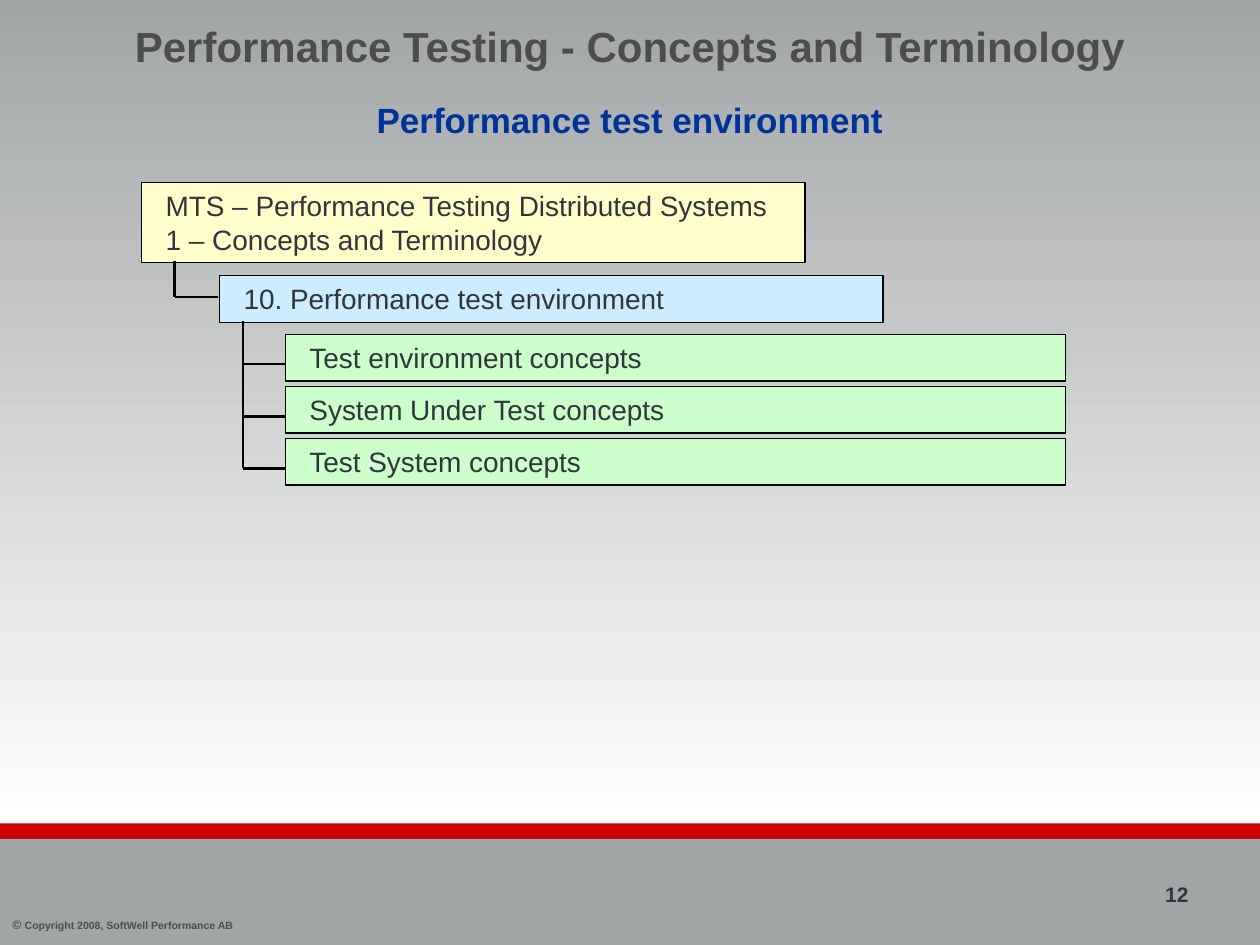
from dataclasses import dataclass

from lxml import etree
from pptx import Presentation
from pptx import util as u
from pptx.dml.color import RGBColor
from pptx.enum import shapes, text
from pptx.oxml.ns import qn


@dataclass(frozen=True)
class Theme:
    font: str = "Arial"
    grey: str = "A2A5A5"
    white: str = "FFFFFF"
    red: str = "CC0000"
    black: str = "000000"
    ink: str = "30373B"
    head: str = "4D4D4D"
    blue: str = "003399"
    course: str = "FFFFCC"
    topic: str = "CCECFF"
    item: str = "CCFFCC"
    title: float = 24
    sub: float = 20
    body: float = 16
    page: float = 12
    mark: float = 7
    small: float = 6
    edge: float = 0.75
    branch: float = 1.5


@dataclass(frozen=True)
class Area:
    """Place and size in centimetres."""
    x: float
    y: float
    w: float
    h: float

    def span(self) -> list[u.Length]:
        return [u.Cm(v) for v in (self.x, self.y, self.w, self.h)]


@dataclass(frozen=True)
class Run:
    words: str
    size: float
    color: str
    bold: bool = True


@dataclass(frozen=True)
class Label:
    area: Area
    runs: tuple[Run, ...]
    center: bool = False
    middle: bool = False


@dataclass(frozen=True)
class Node:
    area: Area
    fill: str
    lines: tuple[str, ...]


@dataclass(frozen=True)
class Branch:
    x1: float
    y1: float
    x2: float
    y2: float


T = Theme()
WIDE, HIGH = 25.4, 19.05
INSET = 0.48
ITEM_X, ITEM_Y, STEP = 5.76, 6.74, 1.05
TRUNK = 4.9
RUNG = 0.6  # from the top of an item to its branch

ITEMS = ("Test environment concepts", "System Under Test concepts", "Test System concepts")
TOPS = [ITEM_Y + i * STEP for i in range(len(ITEMS))]

LABELS = [
    Label(Area(0, 18.36, 6.35, 0.56), (
        Run("© ", T.mark, T.head),
        Run("Copyright 2008, SoftWell Performance AB", T.small, T.head))),
    Label(Area(23.24, 17.65, 2.16, 0.76), (Run("12", T.page, T.ink),)),
    Label(Area(0, 0, WIDE, 1.85), (
        Run("Performance Testing - Concepts and Terminology", T.title, T.head),),
        center=True, middle=True),
    Label(Area(0, 1.86, WIDE, 1.09), (
        Run("Performance test environment", T.sub, T.blue),), center=True),
]

NODES = [
    Node(Area(2.86, 3.68, 13.37, 1.61), T.course, (
        "MTS – Performance Testing Distributed Systems",
        "1 – Concepts and Terminology")),
    Node(Area(4.43, 5.56, 13.37, 0.94), T.topic, ("10. Performance test environment",)),
    *(Node(Area(ITEM_X, top, 15.72, 0.94), T.item, (words,))
      for top, words in zip(TOPS, ITEMS)),
]

BRANCHES = [
    Branch(3.52, 5.26, 3.52, 5.99),
    Branch(3.52, 5.99, 4.4, 5.99),
    Branch(TRUNK, 6.48, TRUNK, TOPS[-1] + RUNG),
    *(Branch(TRUNK, top + RUNG, ITEM_X, top + RUNG) for top in TOPS),
]


def tint(code: str) -> RGBColor:
    return RGBColor.from_string(code)


def add_run(para, run: Run) -> None:
    part = para.add_run()
    part.text = run.words
    font = part.font
    font.name, font.size, font.bold = T.font, u.Pt(run.size), run.bold
    font.color.rgb = tint(run.color)


def draw_rect(slide, area: Area, fill: str):
    shape = slide.shapes.add_shape(shapes.MSO_SHAPE.RECTANGLE, *area.span())
    shape.shadow.inherit = False
    shape.fill.solid()
    shape.fill.fore_color.rgb = tint(fill)
    shape.line.fill.background()
    return shape


def draw_back(slide) -> None:
    """Draw the fading page, the red bar and the footer band."""
    page = draw_rect(slide, Area(0, 0, WIDE, 16.67), T.grey)
    page.fill.gradient()
    page.fill.gradient_angle = 270
    for place, (stop, code) in enumerate(zip(page.fill.gradient_stops, (T.grey, T.white))):
        stop.color.rgb = tint(code)
        stop.position = place
    draw_rect(slide, Area(0, 16.6, WIDE, 0.33), T.red)
    draw_rect(slide, Area(0, 16.91, WIDE, 2.14), T.grey)


def draw_label(slide, label: Label) -> None:
    frame = slide.shapes.add_textbox(*label.area.span()).text_frame
    frame.word_wrap = True
    if label.middle:
        frame.vertical_anchor = text.MSO_ANCHOR.MIDDLE
    para = frame.paragraphs[0]
    para.alignment = text.PP_ALIGN.CENTER if label.center else text.PP_ALIGN.LEFT
    for run in label.runs:
        add_run(para, run)


def draw_node(slide, node: Node) -> None:
    box = draw_rect(slide, node.area, node.fill)
    box.line.color.rgb = tint(T.black)
    box.line.width = u.Pt(T.edge)
    frame = box.text_frame
    frame.word_wrap = True
    frame.margin_left = u.Cm(INSET)
    frame.vertical_anchor = text.MSO_ANCHOR.TOP
    para = frame.paragraphs[0]
    para.alignment = text.PP_ALIGN.LEFT
    for i, words in enumerate(node.lines):
        if i:
            para.add_line_break()
        add_run(para, Run(words, T.body, T.ink, bold=False))


def draw_branch(slide, arm: Branch) -> None:
    ends = [u.Cm(v) for v in (arm.x1, arm.y1, arm.x2, arm.y2)]
    line = slide.shapes.add_connector(shapes.MSO_CONNECTOR.STRAIGHT, *ends)
    line.line.color.rgb = tint(T.black)
    line.line.width = u.Pt(T.branch)
    etree.SubElement(line._element.spPr, qn("a:effectLst"))


def main() -> None:
    deck = Presentation()
    deck.slide_width, deck.slide_height = u.Cm(WIDE), u.Cm(HIGH)
    slide = deck.slides.add_slide(deck.slide_layouts[6])
    draw_back(slide)
    for label in LABELS:
        draw_label(slide, label)
    for node in NODES:
        draw_node(slide, node)
    for arm in BRANCHES:
        draw_branch(slide, arm)
    deck.save("out.pptx")


if __name__ == "__main__":
    main()
